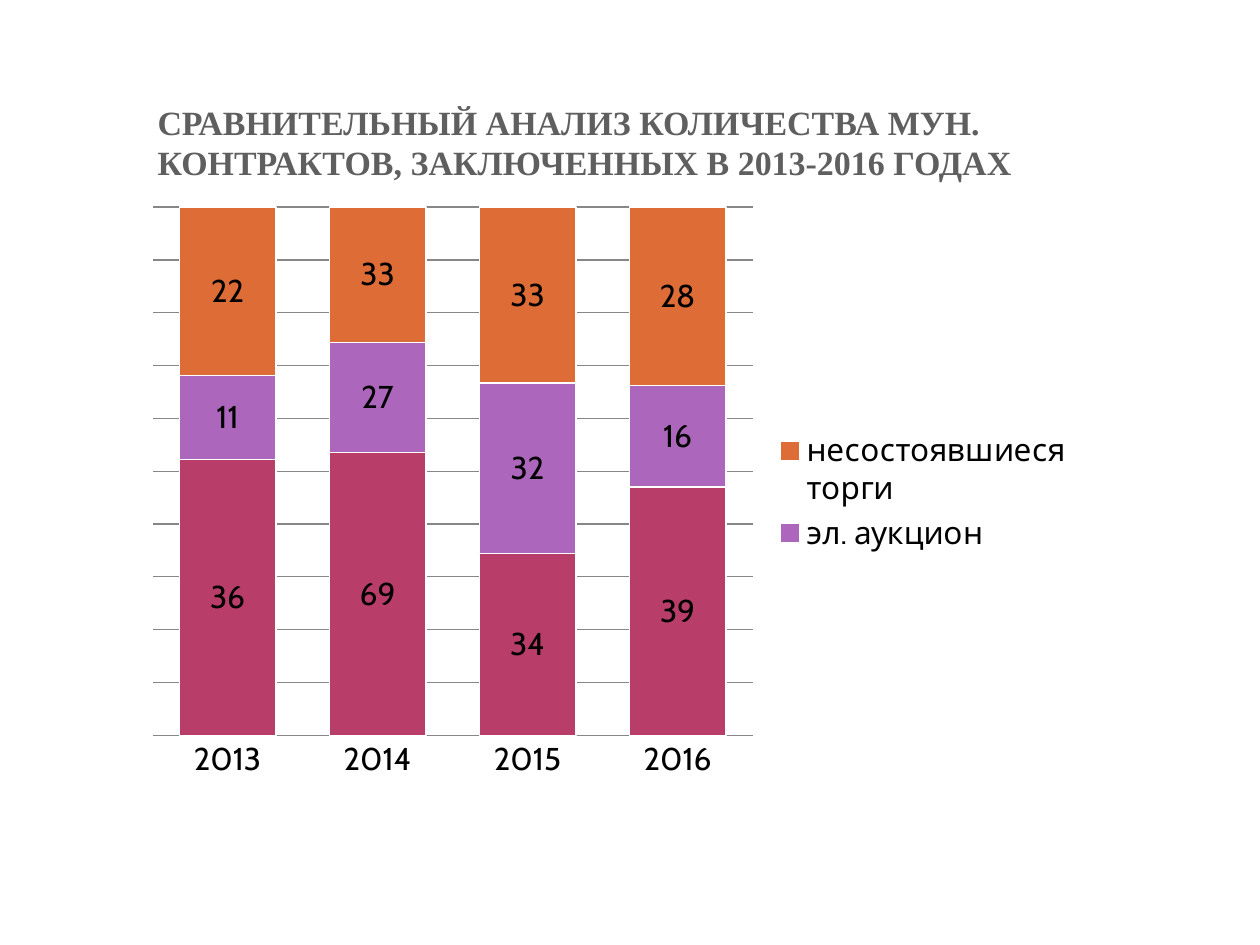
from lxml import etree
from pptx import Presentation
from pptx import util as u
from pptx.chart.data import CategoryChartData
from pptx.dml.color import RGBColor
from pptx.enum import chart as ch, text
from pptx.oxml.ns import qn

COLORS = {
    "title": "5F5F5F", "text": "000000", "grid": "878787", "edge": "FFFFFF",
    "first": "B83D68", "auction": "AC66BB", "failed": "DE6C36",
}
YEARS = ["2013", "2014", "2015", "2016"]
SERIES = [
    ("Series 1", [36, 69, 34, 39], "first"),
    ("эл. аукцион", [11, 27, 32, 16], "auction"),
    ("несостоявшиеся торги", [22, 33, 33, 28], "failed"),
]
PLOT_AREA = {"x": 0.02, "y": 0.02, "w": 0.63, "h": 0.89}


def rgb(name):
    return RGBColor.from_string(COLORS[name])


def add_title(slide, wording):
    title = slide.shapes.title
    title.left, title.top = u.Inches(1.2), u.Inches(0.89)
    title.width, title.height = u.Inches(7.62), u.Inches(0.89)
    frame = title.text_frame
    frame.text = wording
    frame.word_wrap = True
    frame.auto_size = text.MSO_AUTO_SIZE.NONE
    frame.vertical_anchor = text.MSO_ANCHOR.BOTTOM
    frame.margin_left = frame.margin_right = u.Inches(0.05)
    frame.margin_top, frame.margin_bottom = 0, u.Inches(0.33)
    paragraph = frame.paragraphs[0]
    paragraph.alignment = text.PP_ALIGN.LEFT
    font = paragraph.runs[0].font
    font.name, font.size, font.bold = "Times New Roman", u.Pt(19.4), True
    font.color.rgb = rgb("title")


def add_stacked_chart(slide):
    data = CategoryChartData()
    data.categories = YEARS
    for name, values, _ in SERIES:
        data.add_series(name, values)
    chart = slide.shapes.add_chart(
        ch.XL_CHART_TYPE.COLUMN_STACKED_100, u.Inches(1.06), u.Inches(1.55),
        u.Inches(7.56), u.Inches(4.71), data).chart
    chart.has_title = False
    chart.font.name, chart.font.size = "Cabin", u.Pt(18)
    chart.font.color.rgb = rgb("text")
    return chart


def format_bars(plot):
    plot.gap_width, plot.overlap = 55, 100
    plot.vary_by_categories = False
    for series, (_, _, color) in zip(plot.series, SERIES):
        series.format.fill.solid()
        series.format.fill.fore_color.rgb = rgb(color)
        series.format.line.color.rgb = rgb("edge")
        series.format.line.width = u.Pt(0.75)
        series.data_labels.show_value = True


def format_axes(chart):
    categories, values = chart.category_axis, chart.value_axis
    categories.major_tick_mark = ch.XL_TICK_MARK.NONE
    values.visible = False
    values.has_major_gridlines = True
    values.major_gridlines.format.line.width = u.Pt(0.75)
    for line in (categories.format.line, values.major_gridlines.format.line):
        line.color.rgb = rgb("grid")


def place_plot_area(chart):
    plot_area = chart._chartSpace.chart.plotArea
    for old in plot_area.findall(qn("c:layout")):
        plot_area.remove(old)
    layout = etree.Element(qn("c:layout"))
    manual = etree.SubElement(layout, qn("c:manualLayout"))
    settings = {"layoutTarget": "inner", "xMode": "edge", "yMode": "edge", **PLOT_AREA}
    for tag, value in settings.items():
        etree.SubElement(manual, qn(f"c:{tag}")).set("val", str(value))
    plot_area.insert(0, layout)


def add_legend(chart, hidden_index):
    chart.has_legend = True
    legend = chart.legend
    legend.position = ch.XL_LEGEND_POSITION.RIGHT
    legend.include_in_layout = False
    entry = etree.Element(qn("c:legendEntry"))
    etree.SubElement(entry, qn("c:idx")).set("val", str(hidden_index))
    etree.SubElement(entry, qn("c:delete")).set("val", "1")
    legend._element.find(qn("c:legendPos")).addnext(entry)


def main():
    presentation = Presentation()
    presentation.slide_width, presentation.slide_height = u.Inches(10), u.Inches(7.5)
    slide = presentation.slides.add_slide(presentation.slide_layouts[5])
    add_title(slide, "СРАВНИТЕЛЬНЫЙ АНАЛИЗ КОЛИЧЕСТВА МУН. "
                     "КОНТРАКТОВ, ЗАКЛЮЧЕННЫХ В 2013-2016 ГОДАХ")
    chart = add_stacked_chart(slide)
    format_bars(chart.plots[0])
    format_axes(chart)
    place_plot_area(chart)
    add_legend(chart, hidden_index=0)
    presentation.save("out.pptx")


if __name__ == "__main__":
    main()
